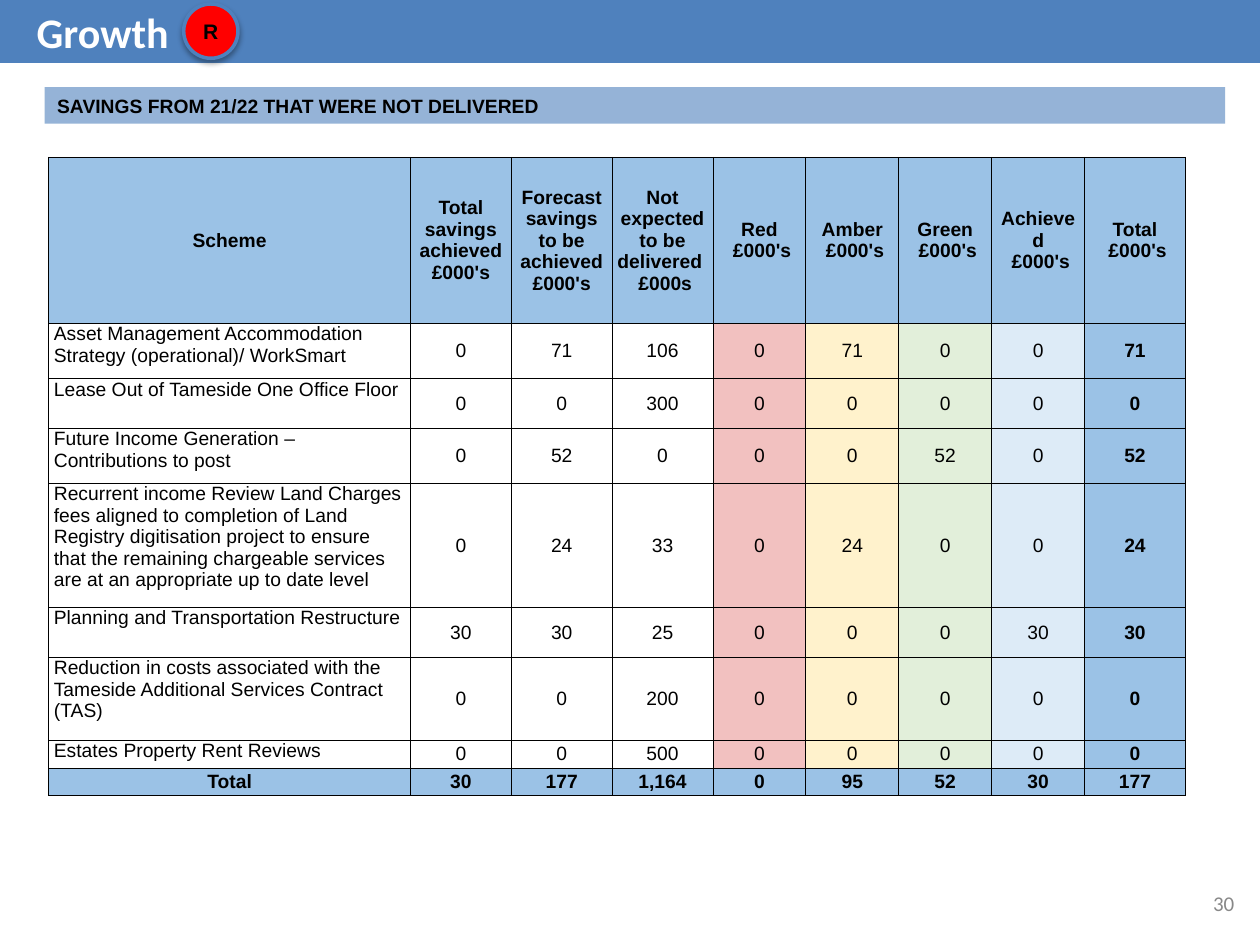
from lxml.etree import SubElement
from pptx import Presentation
from pptx.dml.color import RGBColor
from pptx.enum.shapes import MSO_SHAPE
from pptx.enum.text import MSO_ANCHOR, MSO_AUTO_SIZE, PP_ALIGN
from pptx.oxml import parse_xml
from pptx.oxml.ns import nsdecls, qn
from pptx.util import Pt

BLACK = RGBColor(0x00, 0x00, 0x00)
WHITE = RGBColor(0xFF, 0xFF, 0xFF)
GREY = RGBColor(0x88, 0x88, 0x88)
BANNER_BLUE = RGBColor(0x4F, 0x81, 0xBD)
HEADING_BLUE = RGBColor(0x95, 0xB3, 0xD7)
HEADER_BLUE = RGBColor(0x9B, 0xC2, 0xE6)
STATUS_RED = RGBColor(0xFF, 0x00, 0x00)
PALE_RED = RGBColor(0xF2, 0xC1, 0xC0)
PALE_AMBER = RGBColor(0xFF, 0xF2, 0xCC)
PALE_GREEN = RGBColor(0xE2, 0xEF, 0xDA)
PALE_BLUE = RGBColor(0xDD, 0xEB, 0xF7)

COLUMN_WIDTHS = [206.8] + [57.6] * 3 + [53.1] * 4 + [57.6]
COLUMN_FILLS = [None] * 4 + [PALE_RED, PALE_AMBER, PALE_GREEN, PALE_BLUE, HEADER_BLUE]
ROW_HEIGHTS = [95, 31.5, 28.4, 31.5, 70.8, 28.4, 47.6, 15.7, 15.7]
ROWS = [
    ["Scheme", "Total savings achieved\n£000's",
     "Forecast savings to be achieved\n£000's",
     "Not expected to be delivered \n £000s", "Red\n £000's", "Amber\n £000's",
     "Green\n £000's", "Achieved\n £000's", "Total\n £000's"],
    ["Asset Management Accommodation Strategy (operational)/ WorkSmart",
     "0", "71", "106", "0", "71", "0", "0", "71"],
    ["Lease Out of Tameside One Office Floor",
     "0", "0", "300", "0", "0", "0", "0", "0"],
    ["Future Income Generation – Contributions to post",
     "0", "52", "0", "0", "0", "52", "0", "52"],
    ["Recurrent income Review Land Charges fees aligned to completion of Land "
     "Registry digitisation project to ensure that the remaining chargeable "
     "services are at an appropriate up to date level",
     "0", "24", "33", "0", "24", "0", "0", "24"],
    ["Planning and Transportation Restructure",
     "30", "30", "25", "0", "0", "0", "30", "30"],
    ["Reduction in costs associated with the Tameside Additional Services "
     "Contract (TAS)", "0", "0", "200", "0", "0", "0", "0", "0"],
    ["Estates Property Rent Reviews", "0", "0", "500", "0", "0", "0", "0", "0"],
    ["Total", "30", "177", "1,164", "0", "95", "52", "30", "177"],
]


def write_text(frame, text, size, color=BLACK, bold=False, font="Arial",
               align=PP_ALIGN.LEFT):
    """Fill the first paragraph; a newline in the text becomes a line break."""
    paragraph = frame.paragraphs[0]
    paragraph.alignment = align
    for index, line in enumerate(text.split("\n")):
        if index:
            paragraph.add_line_break()
        span = paragraph.add_run()
        span.text = line
        span.font.name = font
        span.font.size = Pt(size)
        span.font.bold = bold
        span.font.color.rgb = color


def set_margins(frame, horizontal, vertical):
    frame.margin_left = frame.margin_right = Pt(horizontal)
    frame.margin_top = frame.margin_bottom = Pt(vertical)


def place(shape, left, top, width, height):
    shape.left, shape.top = Pt(left), Pt(top)
    shape.width, shape.height = Pt(width), Pt(height)


def paint(shape, color):
    shape.fill.solid()
    shape.fill.fore_color.rgb = color


def add_title(page):
    title = page.shapes.title
    place(title, -0.5, 0, 720.5, 36)
    paint(title, BANNER_BLUE)
    frame = title.text_frame
    frame.auto_size = MSO_AUTO_SIZE.NONE
    frame.vertical_anchor = MSO_ANCHOR.TOP
    set_margins(frame, 7.2, 3.6)
    frame.margin_left = Pt(21.4)
    write_text(frame, "Growth", 24, WHITE, True, "Calibri")


def add_filled_shape(page, kind, left, top, width, height, color):
    shape = page.shapes.add_shape(kind, Pt(left), Pt(top), Pt(width), Pt(height))
    shape.shadow.inherit = False
    paint(shape, color)
    shape.line.fill.background()
    shape.text_frame.word_wrap = True
    shape.text_frame.vertical_anchor = MSO_ANCHOR.MIDDLE
    return shape


def add_status_badge(page):
    badge = add_filled_shape(page, MSO_SHAPE.OVAL, 105, 2.3, 31, 31, STATUS_RED)
    badge.line.color.rgb = BANNER_BLUE
    badge.line.width = Pt(2)
    effects = badge.element.spPr.find(qn("a:effectLst"))
    effects.append(parse_xml(
        f'<a:outerShdw {nsdecls("a")} blurRad="{Pt(3)}" dist="{Pt(1.8)}" '
        'dir="5400000" rotWithShape="0"><a:srgbClr val="000000">'
        '<a:alpha val="35000"/></a:srgbClr></a:outerShdw>'))
    set_margins(badge.text_frame, 3.6, 3.6)
    write_text(badge.text_frame, "R", 12, bold=True, align=PP_ALIGN.CENTER)


def add_section_heading(page):
    bar = add_filled_shape(page, MSO_SHAPE.RECTANGLE, 25.6, 49.8, 674.6, 20.9,
                           HEADING_BLUE)
    write_text(bar.text_frame, "SAVINGS FROM 21/22 THAT WERE NOT DELIVERED", 11,
               bold=True)


def add_borders(cell):
    properties = cell._tc.get_or_add_tcPr()
    for side in ("a:lnL", "a:lnR", "a:lnT", "a:lnB"):
        line = SubElement(properties, qn(side), w=str(Pt(0.5)))
        fill = SubElement(line, qn("a:solidFill"))
        SubElement(fill, qn("a:srgbClr"), val=str(BLACK))


def format_cell(cell, text, fill, is_label):
    """A label is a scheme name: top left; every other cell is centred."""
    set_margins(cell, 3, 0)
    add_borders(cell)
    if fill is None:
        cell.fill.background()
    else:
        paint(cell, fill)
    cell.vertical_anchor = MSO_ANCHOR.TOP if is_label else MSO_ANCHOR.MIDDLE
    write_text(cell.text_frame, text, 11, bold=fill == HEADER_BLUE,
               align=PP_ALIGN.LEFT if is_label else PP_ALIGN.CENTER)


def add_savings_table(page):
    table = page.shapes.add_table(
        len(ROWS), len(COLUMN_WIDTHS), Pt(27.8), Pt(89.8),
        Pt(sum(COLUMN_WIDTHS)), Pt(sum(ROW_HEIGHTS))).table
    table.first_row = table.horz_banding = False
    for column, width in zip(table.columns, COLUMN_WIDTHS):
        column.width = Pt(width)
    for row_index, values in enumerate(ROWS):
        table.rows[row_index].height = Pt(ROW_HEIGHTS[row_index])
        is_body = 0 < row_index < len(ROWS) - 1
        for column_index, value in enumerate(values):
            fill = COLUMN_FILLS[column_index] if is_body else HEADER_BLUE
            format_cell(table.cell(row_index, column_index), value, fill,
                        is_body and column_index == 0)


def add_page_number(page):
    box = page.shapes.add_textbox(Pt(688.7), Pt(504), Pt(20.2), Pt(23))
    frame = box.text_frame
    frame.word_wrap = False
    frame.vertical_anchor = MSO_ANCHOR.MIDDLE
    set_margins(frame, 3.6, 3.6)
    write_text(frame, "30", 12, GREY, font="Calibri", align=PP_ALIGN.RIGHT)


def main():
    deck = Presentation()
    deck.slide_width, deck.slide_height = Pt(720), Pt(538)
    page = deck.slides.add_slide(deck.slide_layouts[5])
    add_title(page)
    add_status_badge(page)
    add_section_heading(page)
    add_savings_table(page)
    add_page_number(page)
    deck.save("out.pptx")


if __name__ == "__main__":
    main()
